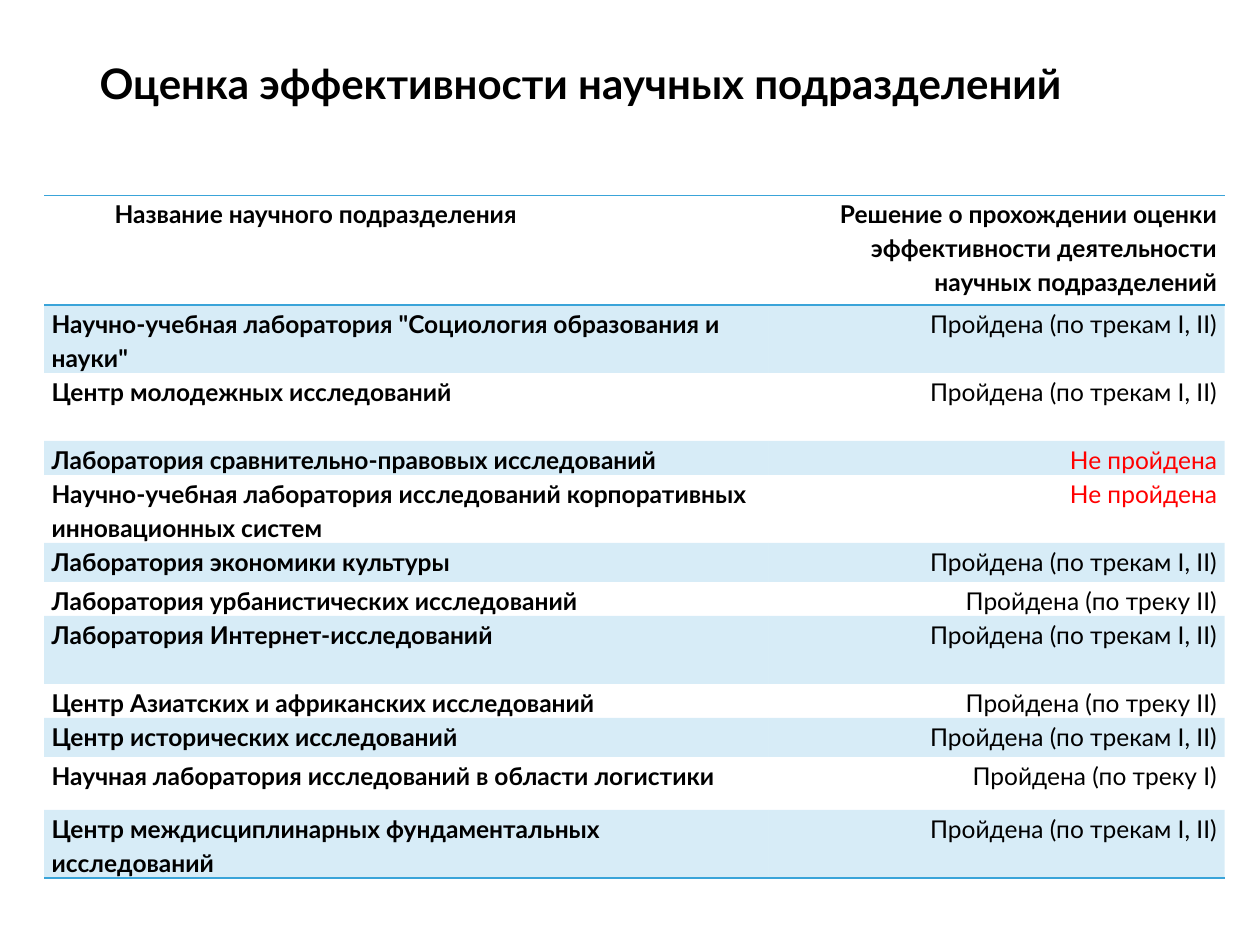
from lxml import etree
from pptx import Presentation
from pptx.dml.color import RGBColor
from pptx.enum.text import MSO_ANCHOR, PP_ALIGN
from pptx.oxml.ns import qn
from pptx.util import Inches, Pt

LEFT, RIGHT = PP_ALIGN.LEFT, PP_ALIGN.RIGHT
MIDDLE = MSO_ANCHOR.MIDDLE
BLACK, RED, BLUE = "000000", "FF0000", "3AA4D9"
NO_STYLE = "{2D5ABB26-0587-4C30-8999-92F81FD0307C}"
LINE = 0.27  # height of one text line in the table

BOTH, SECOND, FIRST, FAILED = (
    "Пройдена (по трекам I, II)", "Пройдена (по треку II)",
    "Пройдена (по треку I)", "Не пройдена")
# name, decision, row height
rows = [
    ("Название научного подразделения",
     "Решение о прохождении оценки эффективности деятельности научных подразделений", 0.87),
    ('Научно-учебная лаборатория "Социология образования и науки"', BOTH, 2 * LINE),
    ("Центр молодежных исследований", BOTH, 2 * LINE),
    ("Лаборатория сравнительно-правовых исследований", FAILED, LINE),
    ("Научно-учебная лаборатория исследований корпоративных инновационных систем",
     FAILED, 2 * LINE),
    ("Лаборатория экономики культуры", BOTH, 0.31),
    ("Лаборатория урбанистических исследований", SECOND, LINE),
    ("Лаборатория Интернет-исследований", BOTH, 2 * LINE),
    ("Центр Азиатских и африканских исследований", SECOND, LINE),
    ("Центр исторических исследований", BOTH, 0.31),
    ("Научная лаборатория исследований в области логистики", FIRST, 0.42),
    ("Центр междисциплинарных фундаментальных исследований", BOTH, 2 * LINE),
]


def write(frame, text, size=14, color=BLACK, bold=False, align=LEFT, indent=0, spacing=1.0):
    para = frame.paragraphs[0]
    para.alignment = align
    para.line_spacing = spacing
    properties = para._p.get_or_add_pPr()
    properties.set("marL", str(Inches(indent)))
    properties.set("indent", "0")
    span = para.add_run()
    span.text = text
    span.font.name = "Lato"
    span.font.size = Pt(size)
    span.font.bold = bold
    span.font.color.rgb = RGBColor.from_string(color)


def add_border(cell, side):
    """Draw a thin blue line on one side of a cell: lnT or lnB."""
    line = etree.SubElement(cell._tc.get_or_add_tcPr(), qn("a:" + side), w=str(Pt(1)))
    paint = etree.SubElement(line, qn("a:solidFill"))
    etree.SubElement(paint, qn("a:srgbClr"), val=BLUE)


deck = Presentation()
deck.slide_width, deck.slide_height = Inches(10), Inches(7.5)
page = deck.slides.add_slide(deck.slide_layouts[5])

title = page.shapes.title
title.left, title.top = Inches(0.69), Inches(0.4)
title.width, title.height = Inches(8.62), Inches(0.52)
title.text_frame.vertical_anchor = MIDDLE
write(title.text_frame, "Оценка эффективности научных подразделений", size=24, bold=True)

widths = (5.75, 3.62)
frame = page.shapes.add_table(
    len(rows), len(widths), Inches(0.35), Inches(1.55),
    Inches(sum(widths)), Inches(sum(row[2] for row in rows)))
table = frame.table
table._tbl.tblPr.find(qn("a:tableStyleId")).text = NO_STYLE
for column, width in zip(table.columns, widths):
    column.width = Inches(width)

for index, (name, decision, height) in enumerate(rows):
    header, last = index == 0, index == len(rows) - 1
    table.rows[index].height = Inches(height)
    name_cell, decision_cell = table.rows[index].cells
    for cell in (name_cell, decision_cell):
        cell.margin_left = cell.margin_right = Inches(0.06)
        cell.margin_top = cell.margin_bottom = 0
        if header:
            add_border(cell, "lnT")
        if header or last:
            add_border(cell, "lnB")
        if index % 2:
            cell.fill.solid()
            cell.fill.fore_color.rgb = RGBColor.from_string(BLUE)
            tint = cell._tc.tcPr.find(qn("a:solidFill")).find(qn("a:srgbClr"))
            etree.SubElement(tint, qn("a:alpha"), val="20000")
        else:
            cell.fill.background()
    write(name_cell.text_frame, name, bold=True, indent=0.5 if header else 0, spacing=1.15)
    write(decision_cell.text_frame, decision, bold=header, align=RIGHT, indent=0.5,
          color=RED if decision == FAILED else BLACK, spacing=1.15)

deck.save("out.pptx")
